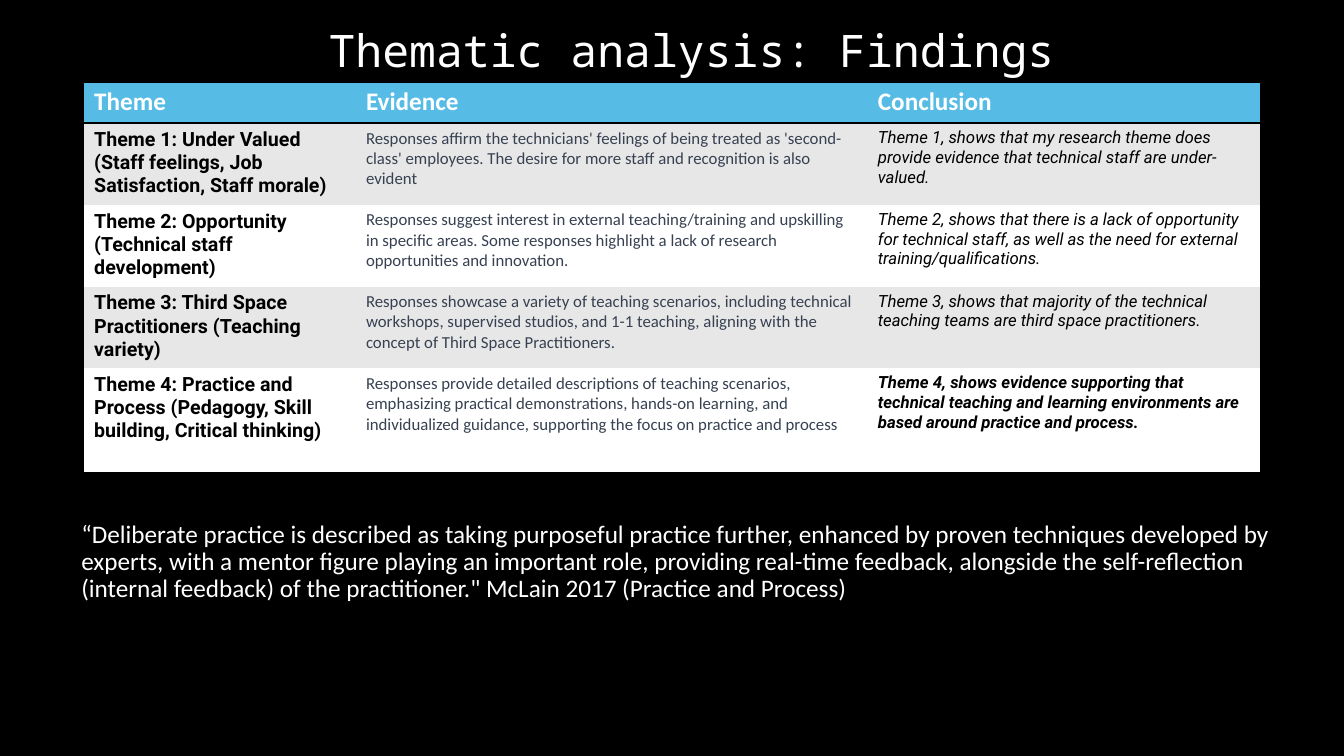
import pptx
import pptx.util
import pptx.dml.color
import pptx.enum.text
import pptx.oxml

HUES = {"black": "000000", "white": "FFFFFF", "blue": "57BCE5",
        "grey": "E7E7E7", "slate": "374151"}
ROWS = [
    ("Theme", "Evidence", "Conclusion"),
    ("Theme 1: Under Valued (Staff feelings, Job Satisfaction, Staff morale)",
     "Responses affirm the technicians' feelings of being treated as 'second-class' employees. "
     "The desire for more staff and recognition is also evident",
     "Theme 1, shows that my research theme does provide evidence that technical staff are under-valued."),
    ("Theme 2: Opportunity (Technical staff development)",
     "Responses suggest interest in external teaching/training and upskilling in specific areas. "
     "Some responses highlight a lack of research opportunities and innovation.",
     "Theme 2, shows that there is a lack of opportunity for technical staff, as well as the need "
     "for external training/qualifications."),
    ("Theme 3: Third Space Practitioners (Teaching variety)",
     "Responses showcase a variety of teaching scenarios, including technical workshops, supervised "
     "studios, and 1-1 teaching, aligning with the concept of Third Space Practitioners.",
     "Theme 3, shows that majority of the technical teaching teams are third space practitioners."),
    ("Theme 4: Practice and Process (Pedagogy, Skill building, Critical thinking)",
     "Responses provide detailed descriptions of teaching scenarios, emphasizing practical "
     "demonstrations, hands-on learning, and individualized guidance, supporting the focus on "
     "practice and process",
     "Theme 4, shows evidence supporting that technical teaching and learning environments are "
     "based around practice and process."),
]
QUOTE = ("“Deliberate practice is described as taking purposeful practice further, enhanced by proven "
         "techniques developed by experts, with a mentor figure playing an important role, providing "
         "real-time feedback, alongside the self-reflection (internal feedback) of the "
         "practitioner.\" McLain 2017 (Practice and Process)")


class Deck:
    """Holds the style and the current slide."""

    head = ("Calibri", 18, "white", True, False)
    looks = (("Roboto", 14, "black", True, False),
             ("Calibri", 12, "slate", False, False),
             ("Roboto", 12, "black", False, True))

    def __init__(self):
        self.show = pptx.Presentation()
        self.show.slide_width = pptx.util.Cm(33.87)
        self.show.slide_height = pptx.util.Cm(19.05)
        self.slide = self.show.slides.add_slide(self.show.slide_layouts[6])
        self.paint(self.slide.background.fill, "black")

    def paint(self, fill, hue):
        fill.solid()
        fill.fore_color.rgb = pptx.dml.color.RGBColor.from_string(HUES[hue])

    def style(self, para, face, size, hue, bold=False, slant=False):
        font = para.font
        font.name, font.size = face, pptx.util.Pt(size)
        font.bold, font.italic = bold, slant
        self.paint(font.fill, hue)

    def text(self, words, spot, look, low=False, inset=0.13):
        box = self.slide.shapes.add_textbox(*map(pptx.util.Cm, spot))
        frame = box.text_frame
        frame.word_wrap = True
        frame.margin_top = pptx.util.Cm(inset)
        if low:
            frame.vertical_anchor = pptx.enum.text.MSO_ANCHOR.BOTTOM
        para = frame.paragraphs[0]
        para.text, para.line_spacing = words, 0.9
        self.style(para, *look)

    def edge(self, cell, inked):
        space = 'xmlns:a="http://schemas.openxmlformats.org/drawingml/2006/main"'
        for side in "LRTB":
            ink = "<a:noFill/>"
            if side in inked:
                ink = f'<a:solidFill><a:srgbClr val="{HUES["black"]}"/></a:solidFill>'
            line = f'<a:ln{side} {space} w="{pptx.util.Pt(2)}">{ink}</a:ln{side}>'
            cell._tc.get_or_add_tcPr().append(pptx.oxml.parse_xml(line))

    def table(self, rows, spot, wide, tall):
        frame = self.slide.shapes.add_table(len(rows), len(wide), *map(pptx.util.Cm, spot))
        grid = frame.table
        grid.horz_banding = False
        for col, width in zip(grid.columns, wide):
            col.width = pptx.util.Cm(width)
        for row, height in zip(grid.rows, tall):
            row.height = pptx.util.Cm(height)
        last = len(rows) - 1
        inks = {0: "TB", 1: "T", last: "B"}
        for r, row in enumerate(rows):
            hue = "blue" if r == 0 else "grey" if r % 2 else "white"
            for c, words in enumerate(row):
                cell = grid.cell(r, c)
                self.edge(cell, inks.get(r, ""))
                self.paint(cell.fill, hue)
                cell.text = words
                para = cell.text_frame.paragraphs[0]
                self.style(para, *(self.looks[c] if r else self.head))
        grid.cell(last, 2).text_frame.paragraphs[0].font.bold = True


def main():
    deck = Deck()
    deck.text("Thematic analysis: Findings", (8.03, 0.38, 25.4, 1.68),
              ("Noto Sans Mono", 32, "white"), low=True)
    deck.table(ROWS, (2.12, 2.06, 29.63, 9.86), (6.85, 12.9, 9.88),
               (1.04, 2.06, 2.06, 2.06, 2.64))
    deck.text(QUOTE, (1.8, 12.32, 30.81, 3.02), ("Calibri", 18, "white"), inset=0.82)
    deck.show.save("out.pptx")


if __name__ == "__main__":
    main()
